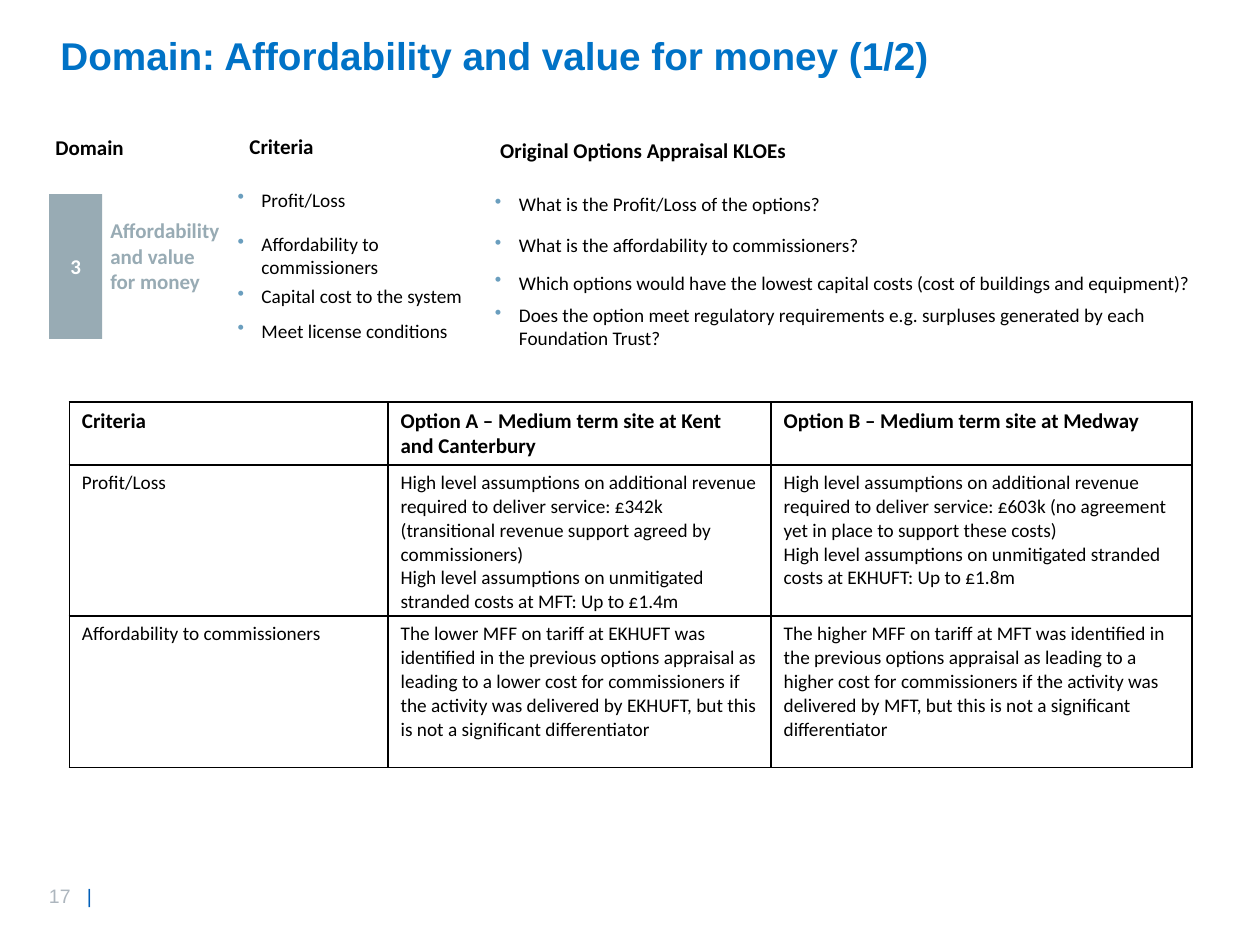
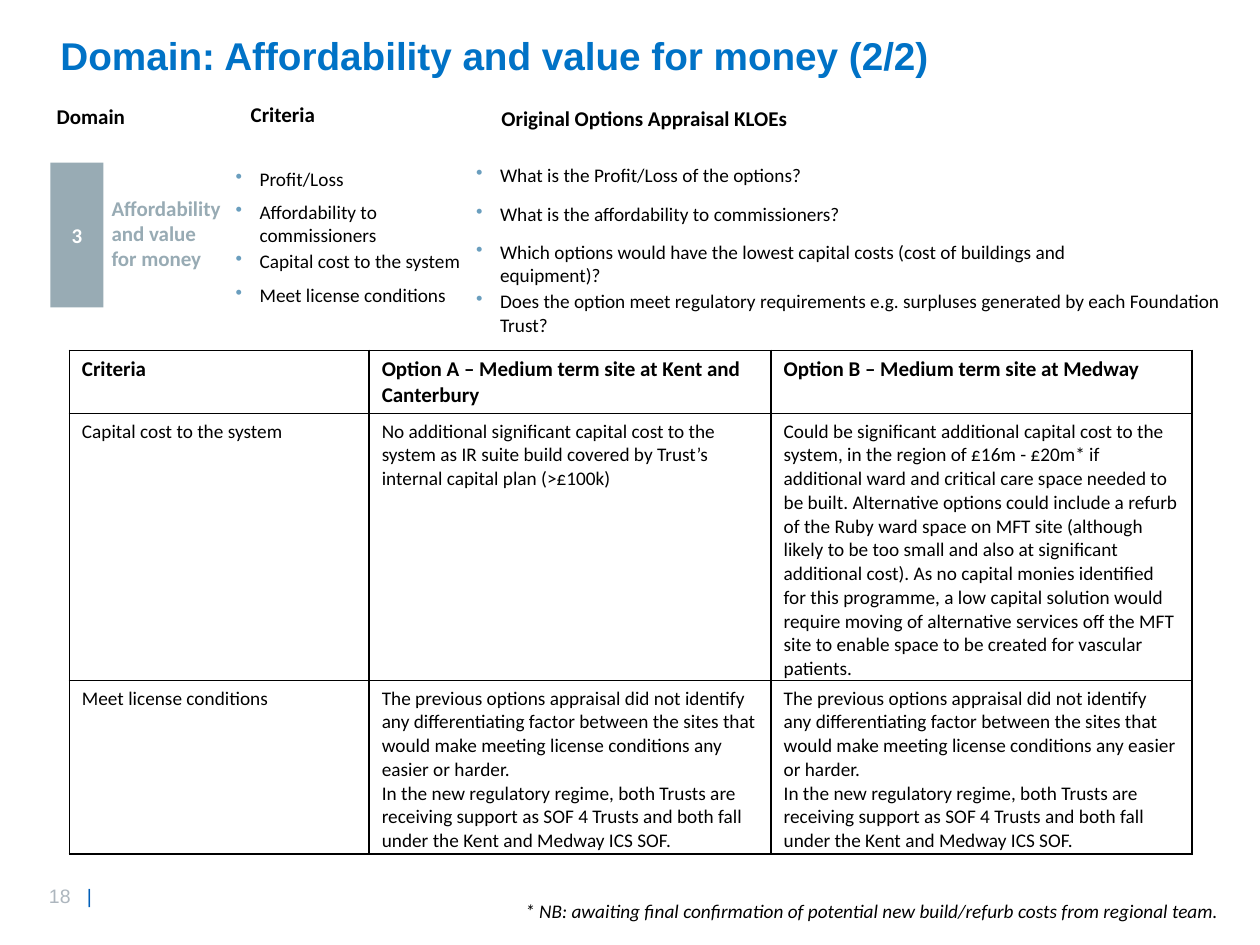
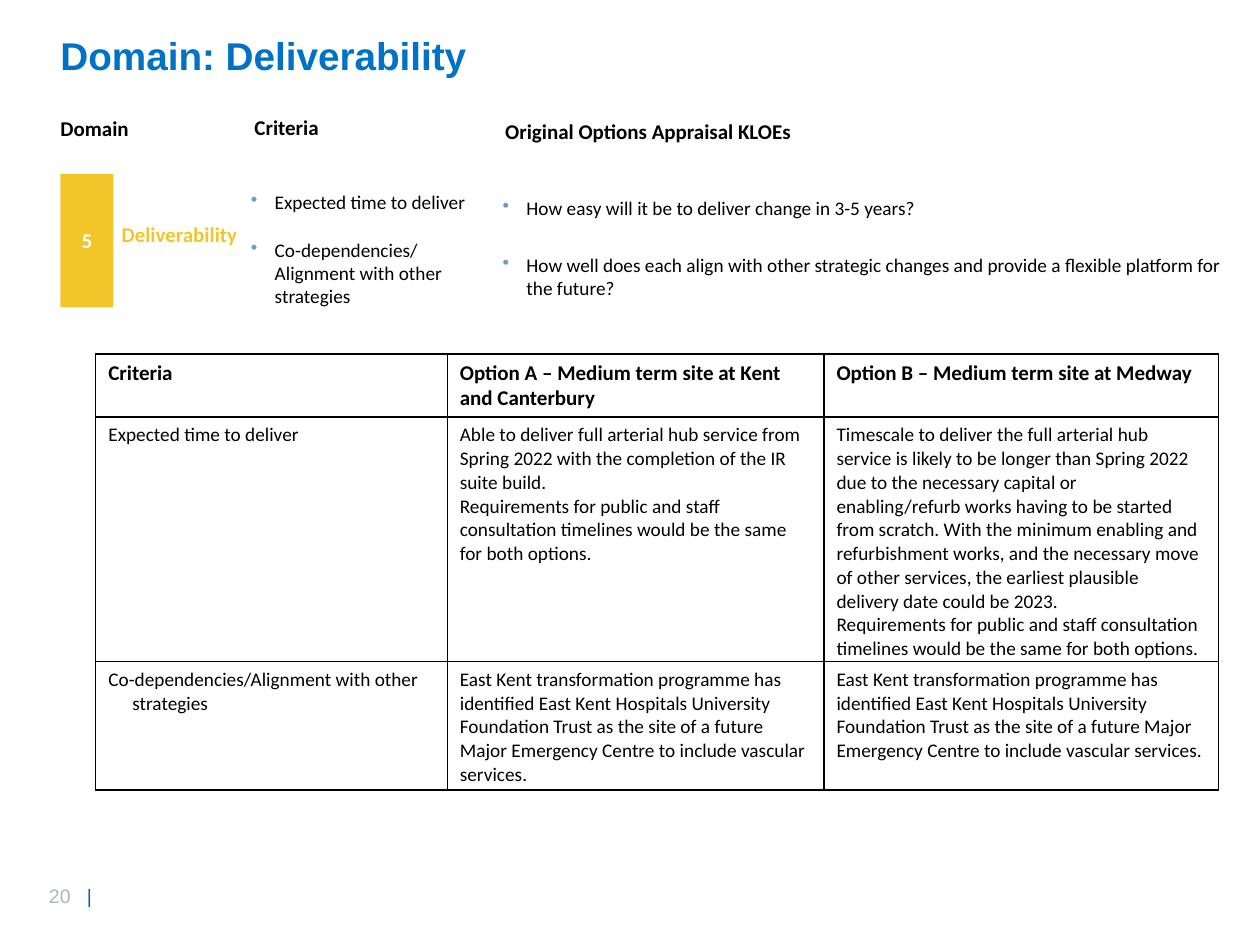
from lxml.etree import SubElement
from pptx import Presentation
from pptx.dml.color import RGBColor
from pptx.enum.shapes import MSO_SHAPE
from pptx.enum.text import MSO_ANCHOR, MSO_AUTO_SIZE, PP_ALIGN
from pptx.oxml.ns import qn
from pptx.util import Inches, Pt

BLACK = RGBColor(0x00, 0x00, 0x00)
WHITE = RGBColor(0xFF, 0xFF, 0xFF)
TITLE_BLUE = RGBColor(0x00, 0x72, 0xC6)
BULLET_BLUE = RGBColor(0x6A, 0x9E, 0xBE)
DIVIDER_BLUE = RGBColor(0x00, 0x5E, 0xB8)
PAGE_GREY = RGBColor(0xAD, 0xB6, 0xBE)
MONEY_GREY = RGBColor(0x98, 0xAB, 0xB4)
DELIVERY_YELLOW = RGBColor(0xF2, 0xC6, 0x2B)

HEADING_FONT = "Arial"
BODY_FONT = "Calibri"
COLUMNS, ROWS = 100, 75
SLIDE_WIDTH, SLIDE_HEIGHT = Inches(10), Inches(7.5)
HANGING = Inches(0.19)
BODY_INSETS = (1, 0.5)
NO_INSETS = (0, 0)

HEADINGS = [(0, 0, "Domain"), (15.4, -0.1, "Criteria"),
            (35.3, 0.2, "Original Options Appraisal KLOEs")]
TABLE_HEADER = ["Criteria", "Option A – Medium term site at Kent and Canterbury",
                "Option B – Medium term site at Medway"]
PROFIT = "Profit/Loss"
AFFORDABILITY = "Affordability to commissioners"
CAPITAL_COST = "Capital cost to the system"
LICENSE = "Meet license conditions"
MONEY_LABEL = "Affordability and value for money"
MONEY_QUESTIONS = [
    "What is the Profit/Loss of the options?",
    "What is the affordability to commissioners?",
    "Which options would have the lowest capital costs (cost of buildings and equipment)?",
    "Does the option meet regulatory requirements e.g. surpluses generated by each "
    "Foundation Trust?"]
LICENSE_FINDINGS = [
    "The previous options appraisal did not identify any differentiating factor between the "
    "sites that would make meeting license conditions any easier or harder.",
    "In the new regulatory regime, both Trusts are receiving support as SOF 4 Trusts and both "
    "fall under the Kent and Medway ICS SOF."]
DELIVERY_TIME = "Expected time to deliver"
ALIGNMENT = "Co-dependencies/Alignment with other strategies"
CONSULTATION = ("Requirements for public and staff consultation timelines would be the same "
                "for both options.")
EMERGENCY_CENTRE = (
    "East Kent transformation programme has identified East Kent Hospitals University "
    "Foundation Trust as the site of a future Major Emergency Centre to include vascular "
    "services.")


def across(columns):
    """Convert grid columns to a length."""
    return round(SLIDE_WIDTH * columns / COLUMNS)


def down(rows):
    """Convert grid rows to a length."""
    return round(SLIDE_HEIGHT * rows / ROWS)


def place(left, top, width, height):
    """Convert a grid area to position and size."""
    return across(left), down(top), across(width), down(height)


def style(paragraph, size, color=BLACK, bold=False, name=BODY_FONT):
    """Format the font of a whole paragraph."""
    font = paragraph.font
    font.name, font.size, font.bold = name, Pt(size), bold
    font.color.rgb = color


def hang(paragraph):
    """Give a paragraph a hanging indent."""
    properties = paragraph._p.get_or_add_pPr()
    properties.set("marL", str(HANGING))
    properties.set("indent", str(-HANGING))
    return properties


def add_text(slide, area, text, size=11, color=BLACK, bold=False, insets=NO_INSETS):
    """Add a wrapped text box and return its paragraph."""
    frame = slide.shapes.add_textbox(*place(*area)).text_frame
    frame.word_wrap = True
    frame.margin_left = frame.margin_right = across(insets[0])
    frame.margin_top = frame.margin_bottom = down(insets[1])
    paragraph = frame.paragraphs[0]
    paragraph.text = text
    style(paragraph, size, color, bold)
    return paragraph


def add_bullet(slide, area, text, insets=NO_INSETS):
    """Add a text box holding one bulleted line."""
    frame = slide.shapes.add_textbox(*place(*area)).text_frame
    frame.word_wrap = True
    frame.margin_left = frame.margin_right = across(insets[0])
    frame.margin_top = frame.margin_bottom = down(insets[1])
    paragraph = frame.paragraphs[0]
    paragraph.text = text
    properties = hang(paragraph)
    color = SubElement(properties, qn("a:buClr"))
    SubElement(color, qn("a:srgbClr"), val=str(BULLET_BLUE))
    SubElement(properties, qn("a:buChar"), char="•")
    style(paragraph, 11)


def add_page_number(slide, number):
    """Add the page number and its divider."""
    frame = slide.shapes.add_textbox(*place(2.9, 69.7, 6.5, 2.9)).text_frame
    paragraph = frame.paragraphs[0]
    tabs = SubElement(paragraph._p.get_or_add_pPr(), qn("a:tabLst"))
    SubElement(tabs, qn("a:tab"), pos=str(across(3)), algn="l")
    for text, color in ((f"{number}\t", PAGE_GREY), ("|", DIVIDER_BLUE)):
        run = paragraph.add_run()
        run.text = text
        run.font.name, run.font.size = HEADING_FONT, Pt(11.1)
        run.font.color.rgb = color


def add_titled_slide(presentation, title, number):
    """Add a title-only slide with its page number."""
    slide = presentation.slides.add_slide(presentation.slide_layouts[5])
    shape = slide.shapes.title
    shape.left, shape.top, shape.width, shape.height = place(4.8, 2, 81.8, 9.1)
    frame = shape.text_frame
    frame.margin_left = frame.margin_right = 0
    frame.vertical_anchor = MSO_ANCHOR.TOP
    frame.auto_size = MSO_AUTO_SIZE.NONE
    paragraph = frame.paragraphs[0]
    paragraph.text = title
    paragraph.alignment = PP_ALIGN.LEFT
    style(paragraph, 22.1, TITLE_BLUE, True, HEADING_FONT)
    add_page_number(slide, number)
    return slide


def add_headings(slide, left, top):
    """Add the three column headings above the domain."""
    for offset, drop, text in HEADINGS:
        add_text(slide, (left + offset, top + drop, 25, 2), text, 12, bold=True)


def add_domain(slide, bar, number, label, label_drop, label_width, color):
    """Add the numbered domain bar and its label."""
    left, top = bar[:2]
    shape = slide.shapes.add_shape(MSO_SHAPE.RECTANGLE, *place(*bar))
    shape.shadow.inherit = False
    shape.fill.solid()
    shape.fill.fore_color.rgb = color
    shape.line.fill.background()
    shape.text_frame.vertical_anchor = MSO_ANCHOR.MIDDLE
    paragraph = shape.text_frame.paragraphs[0]
    paragraph.text = number
    paragraph.alignment = PP_ALIGN.CENTER
    style(paragraph, 12, WHITE, True)
    add_text(slide, (left + 4.85, top + label_drop, label_width, 6.1), label, 12, color, True)


def add_criteria(slide, left, tops, texts):
    """Add the list of criteria."""
    for top, text in zip(tops, texts):
        add_bullet(slide, (left, top, 18.2, 1.9), text)


def add_questions(slide, left, tops, widths, texts):
    """Add the list of appraisal questions."""
    for top, width, text in zip(tops, widths, texts):
        add_bullet(slide, (left, top, width, 2.9), text, BODY_INSETS)


def fill_cell(cell, content, header, hanging):
    """Write a cell with black borders and white fill."""
    cell.margin_bottom = 0
    properties = cell._tc.get_or_add_tcPr()
    for side in ("lnL", "lnR", "lnT", "lnB"):
        line = SubElement(properties, qn(f"a:{side}"), w=str(Pt(1)))
        SubElement(SubElement(line, qn("a:solidFill")), qn("a:srgbClr"), val=str(BLACK))
    cell.fill.solid()
    cell.fill.fore_color.rgb = WHITE
    cell.text = content if isinstance(content, str) else "\n".join(content)
    for paragraph in cell.text_frame.paragraphs:
        if hanging:
            hang(paragraph)
        style(paragraph, 12 if header else 11, bold=header)


def add_options_table(slide, left, top, widths, heights, body):
    """Add the table comparing both options."""
    rows = [TABLE_HEADER, *body]
    area = place(left, top, sum(widths), sum(heights))
    table = slide.shapes.add_table(len(rows), len(widths), *area).table
    table.first_row = table.horz_banding = False
    for column, width in zip(table.columns, widths):
        column.width = across(width)
    for row_index, (row, height, contents) in enumerate(zip(table.rows, heights, rows)):
        row.height = down(height)
        for column_index, (cell, content) in enumerate(zip(row.cells, contents)):
            header = row_index == 0
            fill_cell(cell, content, header, column_index == 0 and not header)


def add_profit_slide(presentation):
    """Build the first affordability slide."""
    slide = add_titled_slide(presentation, "Domain: Affordability and value for money (1/2)", 17)
    add_headings(slide, 4.4, 10.7)
    add_domain(slide, (3.9, 15.4, 4.2, 11.5), "3", MONEY_LABEL, 1.9, 8.8, MONEY_GREY)
    add_criteria(slide, 18.85, (14.9, 18.4, 22.6, 25.3),
                 (PROFIT, AFFORDABILITY, CAPITAL_COST, LICENSE))
    add_questions(slide, 38.3, (14.8, 18, 21, 23.6), (59.1, 59.1, 59.1, 57.8), MONEY_QUESTIONS)
    add_options_table(slide, 5.5, 31.9, (25.3, 30.4, 33.4), (5, 12, 12), [
        [PROFIT,
         ["High level assumptions on additional revenue required to deliver service: £342k "
          "(transitional revenue support agreed by commissioners)",
          "High level assumptions on unmitigated stranded costs at MFT: Up to £1.4m"],
         ["High level assumptions on additional revenue required to deliver service: £603k "
          "(no agreement yet in place to support these costs)",
          "High level assumptions on unmitigated stranded costs at EKHUFT: Up to £1.8m"]],
        [AFFORDABILITY,
         "The lower MFF on tariff at EKHUFT was identified in the previous options appraisal "
         "as leading to a lower cost for commissioners if the activity was delivered by "
         "EKHUFT, but this is not a significant differentiator",
         "The higher MFF on tariff at MFT was identified in the previous options appraisal "
         "as leading to a higher cost for commissioners if the activity was delivered by "
         "MFT, but this is not a significant differentiator"]])


def add_capital_slide(presentation):
    """Build the second affordability slide."""
    slide = add_titled_slide(presentation, "Domain: Affordability and value for money (2/2)", 18)
    add_headings(slide, 4.5, 8.2)
    add_domain(slide, (4, 12.9, 4.2, 11.5), "3", MONEY_LABEL, 2.6, 8.8, MONEY_GREY)
    add_criteria(slide, 18.7, (13.3, 15.9, 19.8, 22.5),
                 (PROFIT, AFFORDABILITY, CAPITAL_COST, LICENSE))
    add_questions(slide, 36.8, (12.5, 15.6, 18.6, 22.5), (51.9, 51.9, 51.9, 61.9),
                  MONEY_QUESTIONS)
    add_options_table(slide, 5.5, 27.8, (23.8, 31.9, 33.4), (5, 21.2, 13.8), [
        [CAPITAL_COST,
         "No additional significant capital cost to the system as IR suite build covered by "
         "Trust’s internal capital plan (>£100k)",
         "Could be significant additional capital cost to the system, in the region of £16m - "
         "£20m* if additional ward and critical care space needed to be built. Alternative "
         "options could include a refurb of the Ruby ward space on MFT site (although likely "
         "to be too small and also at significant additional cost). As no capital monies "
         "identified for this programme, a low capital solution would require moving of "
         "alternative services off the MFT site to enable space to be created for vascular "
         "patients."],
        [LICENSE, LICENSE_FINDINGS, LICENSE_FINDINGS]])
    note = add_text(slide, (40.7, 70.9, 59, 4.1),
                    "* NB: awaiting final confirmation of potential new build/refurb costs "
                    "from regional team.", insets=BODY_INSETS)
    note.font.italic = True


def add_deliverability_slide(presentation):
    """Build the deliverability slide."""
    slide = add_titled_slide(presentation, "Domain: Deliverability", 20)
    add_headings(slide, 4.8, 9.2)
    add_domain(slide, (4.8, 13.8, 4.2, 10.6), "5", "Deliverability", 3.8, 9.5, DELIVERY_YELLOW)
    add_criteria(slide, 19.9, (15.1, 18.9), (DELIVERY_TIME, ALIGNMENT))
    add_questions(slide, 38.9, (15.1, 19.6), (60.7, 60.7), (
        "How easy will it be to deliver change in 3-5 years?",
        "How well does each align with other strategic changes and provide a flexible "
        "platform for the future?"))
    add_options_table(slide, 7.6, 28.1, (27.9, 29.9, 31.3), (5, 19.4, 10.2), [
        [DELIVERY_TIME,
         ["Able to deliver full arterial hub service from Spring 2022 with the completion of "
          "the IR suite build.", CONSULTATION],
         ["Timescale to deliver the full arterial hub service is likely to be longer than "
          "Spring 2022 due to the necessary capital or enabling/refurb works having to be "
          "started from scratch. With the minimum enabling and refurbishment works, and the "
          "necessary move of other services, the earliest plausible delivery date could be "
          "2023.", CONSULTATION]],
        [ALIGNMENT, EMERGENCY_CENTRE, EMERGENCY_CENTRE]])


def main():
    """Build and save the presentation."""
    presentation = Presentation()
    presentation.slide_width, presentation.slide_height = SLIDE_WIDTH, SLIDE_HEIGHT
    add_profit_slide(presentation)
    add_capital_slide(presentation)
    add_deliverability_slide(presentation)
    presentation.save("out.pptx")


if __name__ == "__main__":
    main()
